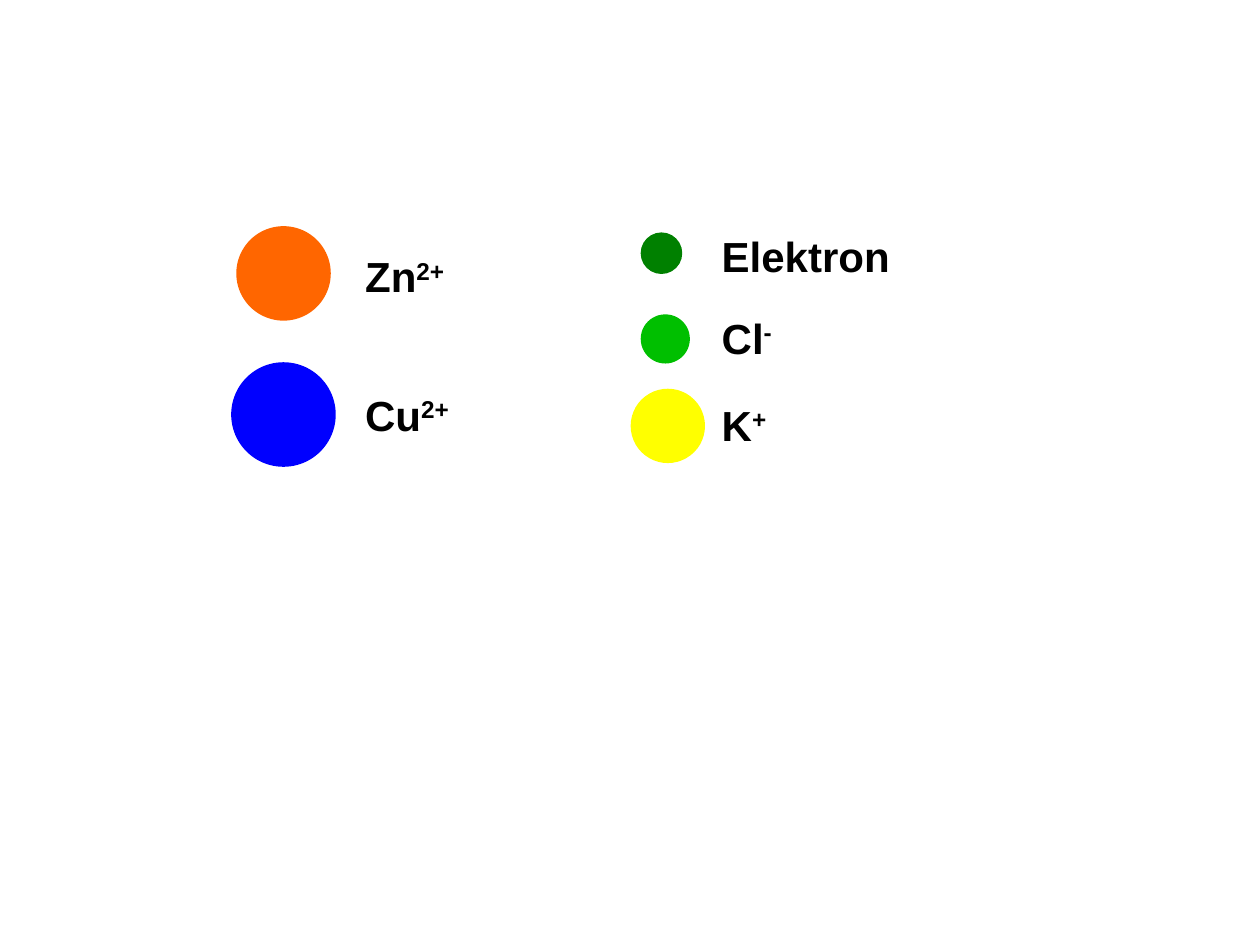
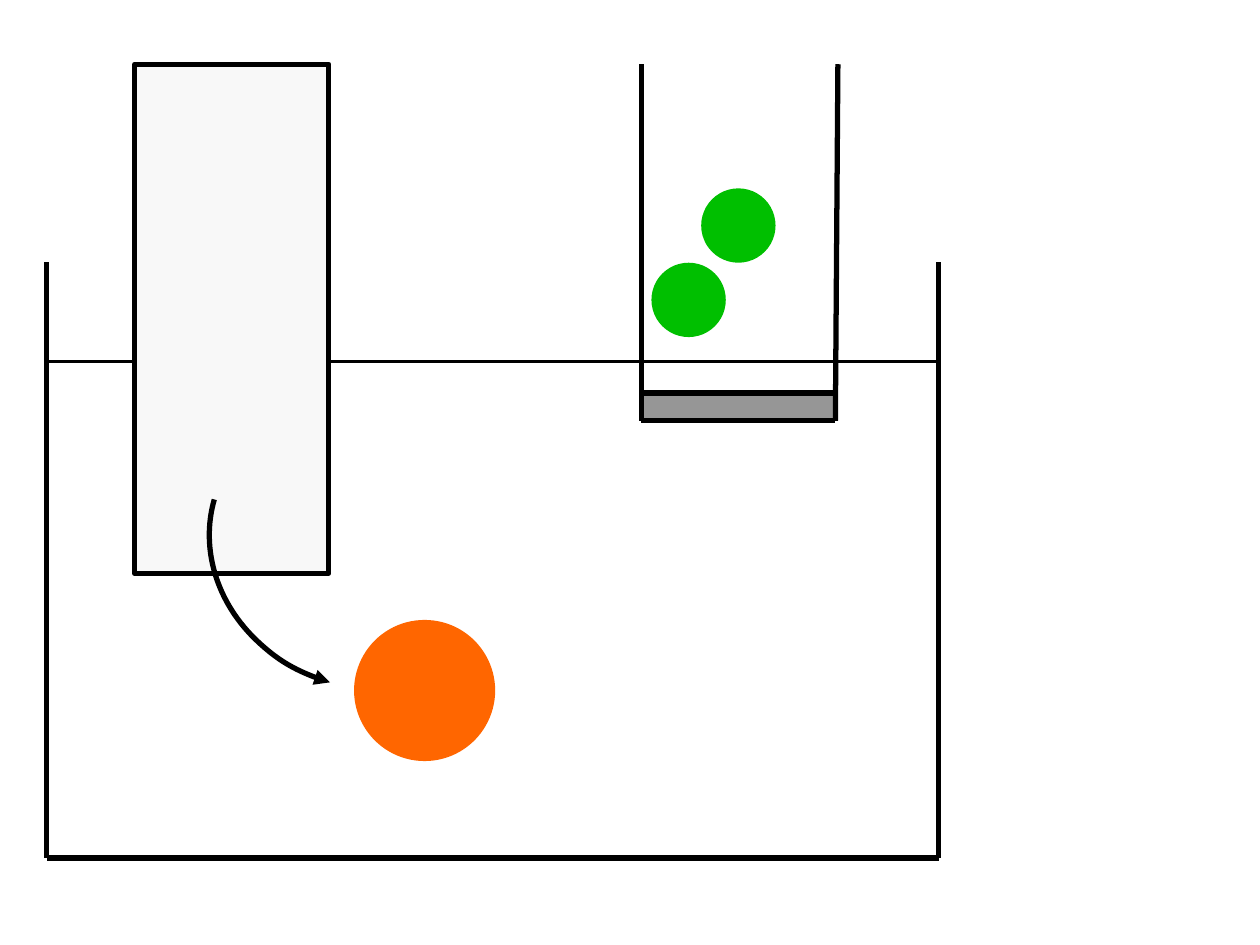
from lxml.etree import SubElement
from pptx import Presentation
from pptx.dml.color import RGBColor
from pptx.enum.shapes import MSO_CONNECTOR, MSO_SHAPE
from pptx.enum.text import MSO_AUTO_SIZE
from pptx.oxml.ns import qn
from pptx.util import Inches, Pt

COLUMNS, ROWS = 10, 7.5
CELL = Inches(1)
FONT = "Arial"
BLACK = "000000"
ZINC, COPPER, ELECTRON = "FF6600", "0000FF", "008000"
CHLORIDE, POTASSIUM = "00BF00", "FFFF00"
ELECTRODE_FILL, MEMBRANE_FILL = "F8F8F8", "969696"
THICK, THIN = 3, 1.5


def grid(*lengths):
    """Turn columns or rows of the grid into slide lengths."""
    return [round(n * CELL) for n in lengths]


def rgb(hex_color):
    """Turn a hex string into a colour."""
    return RGBColor.from_string(hex_color)


def add_shape(slide, kind, box, fill=None, line=None):
    """Add a flat preset shape with an optional fill and outline."""
    sp = slide.shapes.add_shape(kind, *grid(*box))
    sp.shadow.inherit = False
    if fill:
        sp.fill.solid()
        sp.fill.fore_color.rgb = rgb(fill)
    else:
        sp.fill.background()
    if line:
        sp.line.color.rgb = rgb(line)
        sp.line.width = Pt(THICK)
    else:
        sp.line.fill.background()
    return sp


def add_particle(slide, x, y, diameter, color):
    """Add a round particle centred on a point."""
    box = (x - diameter / 2, y - diameter / 2, diameter, diameter)
    return add_shape(slide, MSO_SHAPE.OVAL, box, fill=color)


def add_line(slide, start, end, width=THICK):
    """Add a straight black line between two points."""
    line = slide.shapes.add_connector(MSO_CONNECTOR.STRAIGHT, *grid(*start, *end))
    line.line.color.rgb = rgb(BLACK)
    line.line.width = Pt(width)
    SubElement(line._element.spPr, qn("a:effectLst"))
    return line


def add_text(slide, box, text, superscript="", size=24, color=BLACK, bold=True):
    """Add a text box whose text may end in a superscript."""
    tb = slide.shapes.add_textbox(*grid(*box))
    tf = tb.text_frame
    tf.word_wrap = True
    tf.auto_size = MSO_AUTO_SIZE.SHAPE_TO_FIT_TEXT
    p = tf.paragraphs[0]
    for part, baseline in ((text, 0), (superscript, 30000)):
        if not part:
            continue
        r = p.add_run()
        r.text = part
        r.font.name, r.font.size, r.font.bold = FONT, Pt(size), bold
        r.font.color.rgb = rgb(color)
        if baseline:
            r._r.get_or_add_rPr().set("baseline", str(baseline))
    return tb


def legend_column(slide, box, entries):
    """Add particles with their names beside them in a legend column."""
    left, top, width, height = box
    label_left = left + width - 1.8
    for name, charge, color, diameter, (x, y), label_y in entries:
        add_particle(slide, left + x, top + y, diameter, color)
        add_text(slide, (label_left, top + label_y, 1.8, 0.5), name, charge)


def beaker(slide, box, water_depth):
    """Add an open vessel with its water surface."""
    left, top, width, height = box
    right, bottom, surface = left + width, top + height, top + water_depth
    add_line(slide, (left, surface), (right, surface), THIN)
    for x in (left, right):
        add_line(slide, (x, top), (x, bottom))
    add_line(slide, (left, bottom), (right, bottom))


def salt_bridge(slide, box, membrane_height):
    """Add an open tube closed by a membrane, with two chloride ions."""
    left, top, width, height = box
    right, bottom = left + width, top + height
    membrane_top = bottom - membrane_height
    add_shape(slide, MSO_SHAPE.RECTANGLE,
              (left, membrane_top, width, membrane_height), fill=MEMBRANE_FILL)
    for x, y in ((0.77, 1.28), (0.08 + 0.295, 1.87)):
        add_particle(slide, left + x, top + y, 0.59, CHLORIDE)
    for y in (membrane_top, bottom):
        add_line(slide, (left, y), (right, y))
    add_line(slide, (left, bottom), (left, top))
    add_line(slide, (right, bottom), (right + 0.02, top))


def dissolving_electrode(slide, box):
    """Add an electrode and the zinc ion that leaves it along an arrow."""
    left, top, width, height = box
    bottom = top + height
    add_shape(slide, MSO_SHAPE.RECTANGLE, box, ELECTRODE_FILL, BLACK)
    add_particle(slide, left + 2.3, bottom + 0.93, 1.12, ZINC)
    arc = add_shape(slide, MSO_SHAPE.ARC,
                    (left + 0.58, bottom - 1.37, 2.57, 2.28), line=BLACK)
    arc.rotation = 196.1
    SubElement(arc.line._get_or_add_ln(), qn("a:headEnd"), type="triangle")


def legend_slide(slide):
    """Build the key to the particles."""
    legend_column(slide, (1.8, 1.75, 2.8, 2), [
        ("Zn", "2+", ZINC, 0.75, (0.45, 0.42), 0.19),
        ("Cu", "2+", COPPER, 0.83, (0.45, 1.54), 1.29),
    ])
    legend_column(slide, (5, 1.75, 2.43, 2), [
        ("Elektron", "", ELECTRON, 0.33, (0.25, 0.26), 0.03),
        ("Cl", "-", CHLORIDE, 0.39, (0.28, 0.94), 0.68),
        ("K", "+", POTASSIUM, 0.59, (0.3, 1.63), 1.37),
    ])


def half_cell_slide(slide):
    """Build the half cell with its electrode and salt bridge."""
    beaker(slide, (0.37, 2.08, 7.08, 4.73), water_depth=0.79)
    dissolving_electrode(slide, (1.07, 0.51, 1.54, 4.04))
    salt_bridge(slide, (5.09, 0.51, 1.54, 2.83), membrane_height=0.22)


def main():
    """Build and save the slides."""
    prs = Presentation()
    prs.slide_width, prs.slide_height = grid(COLUMNS, ROWS)
    for build in (legend_slide, half_cell_slide):
        build(prs.slides.add_slide(prs.slide_layouts[6]))
    prs.save("out.pptx")


if __name__ == "__main__":
    main()
